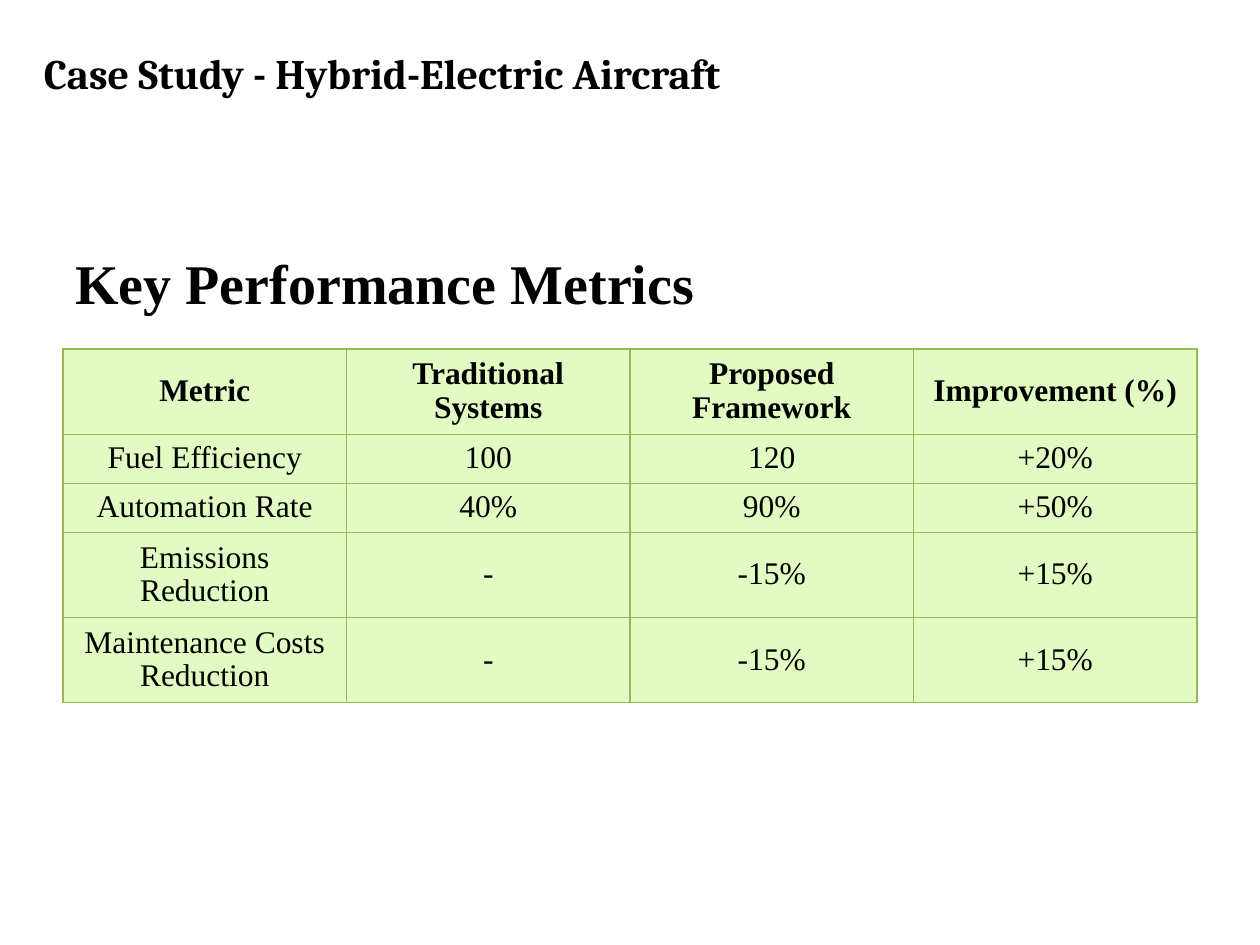
"""Build the hybrid-electric aircraft case study slide with its metrics table."""
from lxml import etree
from pptx import Presentation
from pptx.dml.color import RGBColor
from pptx.enum.text import MSO_ANCHOR, PP_ALIGN
from pptx.oxml.ns import qn
from pptx.util import Inches, Pt

MIDDLE = MSO_ANCHOR.MIDDLE
CENTER = PP_ALIGN.CENTER
BLACK = RGBColor(0x00, 0x00, 0x00)
PALE_GREEN = RGBColor(0xE2, 0xFB, 0xC2)
BORDER_GREEN = RGBColor(0x98, 0xB9, 0x55)

HEADINGS = [
    ("Case Study - Hybrid-Electric Aircraft", "Cambria", 24, 0.25, 0.33, 7.17, 1),
    ("Key Performance Metrics", "Times New Roman", 32, 0.5, 1.92, 9, 4.67),
]
METRICS = [
    ("Metric", "Traditional Systems", "Proposed Framework", "Improvement (%)"),
    ("Fuel Efficiency", "100", "120", "+20%"),
    ("Automation Rate", "40%", "90%", "+50%"),
    ("Emissions Reduction", "-", "-15%", "+15%"),
    ("Maintenance Costs Reduction", "-", "-15%", "+15%"),
]
ROW_HEIGHTS = [0.66, 0.38, 0.38, 0.65, 0.65]


def style_span(span, font_name, size, bold):
    span.font.name = font_name
    span.font.size = Pt(size)
    span.font.bold = bold
    span.font.color.rgb = BLACK


def add_borders(cell):
    properties = cell._tc.get_or_add_tcPr()
    for position, side in enumerate(("a:lnL", "a:lnR", "a:lnT", "a:lnB")):
        line = etree.Element(qn(side), w=str(Pt(0.75)))
        fill = etree.SubElement(line, qn("a:solidFill"))
        etree.SubElement(fill, qn("a:srgbClr"), val=str(BORDER_GREEN))
        properties.insert(position, line)


deck = Presentation()
deck.slide_width = Inches(10)
deck.slide_height = Inches(7.5)
page = deck.slides.add_slide(deck.slide_layouts[6])

for text, font_name, size, left, top, width, height in HEADINGS:
    box = page.shapes.add_textbox(Inches(left), Inches(top), Inches(width), Inches(height))
    box.text_frame.word_wrap = True
    box.text_frame.text = text
    style_span(box.text_frame.paragraphs[0].runs[0], font_name, size, True)

table = page.shapes.add_table(
    len(METRICS), len(METRICS[0]),
    Inches(0.5), Inches(2.77), Inches(9), Inches(sum(ROW_HEIGHTS)),
).table
table.horz_banding = False

for row_index, (values, height) in enumerate(zip(METRICS, ROW_HEIGHTS)):
    table.rows[row_index].height = Inches(height)
    for column_index, value in enumerate(values):
        cell = table.cell(row_index, column_index)
        cell.text_frame.text = value
        cell.vertical_anchor = MIDDLE
        cell.fill.solid()
        cell.fill.fore_color.rgb = PALE_GREEN
        add_borders(cell)
        para = cell.text_frame.paragraphs[0]
        para.alignment = CENTER
        para.line_spacing = 0.96
        style_span(para.runs[0], "Times New Roman", 18, row_index == 0)

deck.save("out.pptx")
